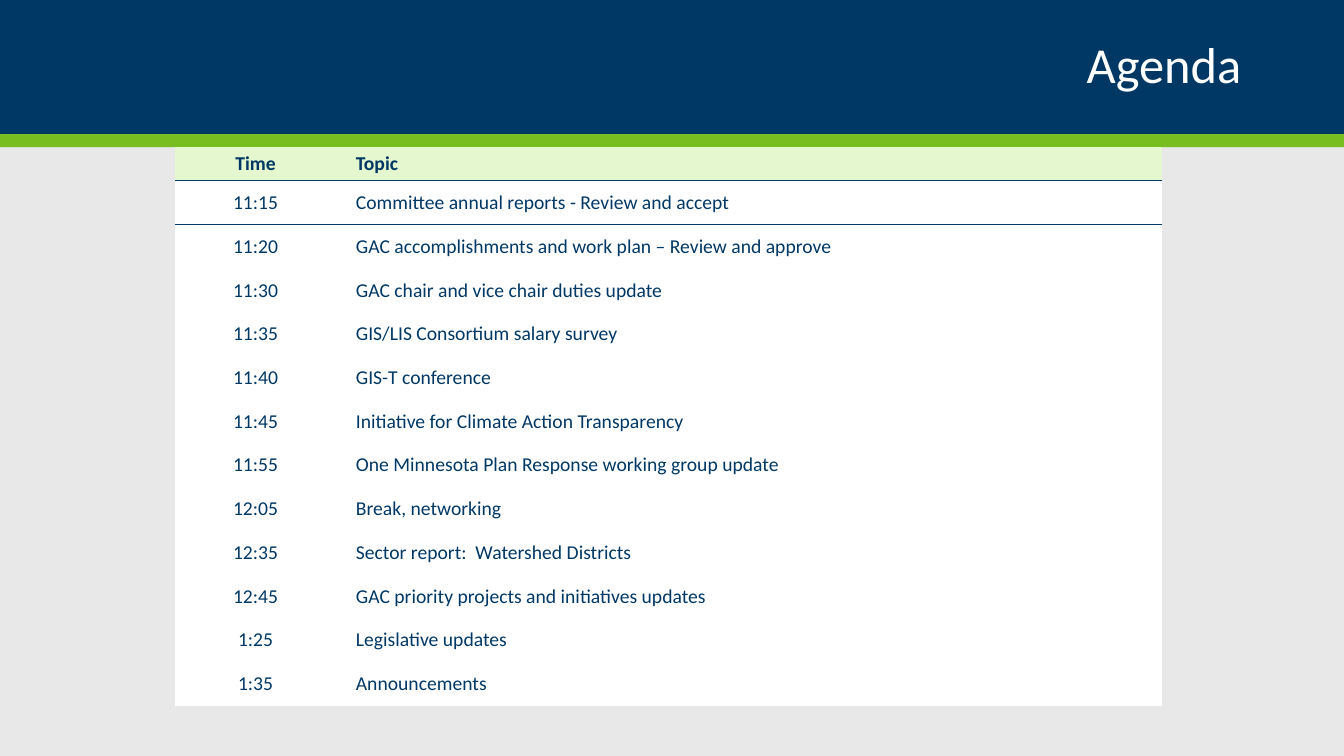
from lxml import etree
from pptx import Presentation
from pptx.dml.color import RGBColor
from pptx.enum import shapes, text
from pptx.oxml import ns
from pptx.util import Inches, Pt

NAVY = RGBColor(0x00, 0x38, 0x65)
GREEN = RGBColor(0x78, 0xBE, 0x21)
PALE = RGBColor(0xE4, 0xF7, 0xCE)
GRAY = RGBColor(0xE8, 0xE8, 0xE8)
WHITE = RGBColor(0xFF, 0xFF, 0xFF)
FONT = "Calibri"
PLAIN = "{2D5ABB26-0587-4C30-8999-92F81FD0307C}"  # table style without grid
LEFT, MID, RIGHT = (text.PP_ALIGN.LEFT, text.PP_ALIGN.CENTER,
                    text.PP_ALIGN.RIGHT)

AGENDA = [
    ("Time", "Topic"),
    ("11:15", "Committee annual reports - Review and accept"),
    ("11:20", "GAC accomplishments and work plan – Review and approve"),
    ("11:30", "GAC chair and vice chair duties update"),
    ("11:35", "GIS/LIS Consortium salary survey"),
    ("11:40", "GIS-T conference"),
    ("11:45", "Initiative for Climate Action Transparency"),
    ("11:55", "One Minnesota Plan Response working group update"),
    ("12:05", "Break, networking"),
    ("12:35", "Sector report:  Watershed Districts"),
    ("12:45", "GAC priority projects and initiatives updates"),
    ("1:25", "Legislative updates"),
    ("1:35", "Announcements"),
]


def format_all(thing, values):
    for name, value in values.items():
        setattr(thing, name, value)


def write(frame, words, align, size, color, bold=False):
    para = frame.paragraphs[0]
    para.alignment = align
    run = para.add_run()
    run.text = words
    format_all(run.font, {"name": FONT, "size": Pt(size), "bold": bold})
    run.font.color.rgb = color
    return para


def add_band(slide, left, top, width, height, color):
    band = slide.shapes.add_shape(
        shapes.MSO_SHAPE.RECTANGLE,
        *map(Inches, (left, top, width, height)))
    band.shadow.inherit = False
    band.fill.solid()
    band.fill.fore_color.rgb = color
    band.line.fill.background()


def add_header(slide, left, top, width, height, title):
    # Navy band with a green strip below
    strip = 0.13
    main = height - strip
    add_band(slide, left, top, width, main, NAVY)
    add_band(slide, left, top + main, width, strip, GREEN)

    # Title
    side = 0.92
    box = slide.shapes.add_textbox(
        Inches(left + side), Inches(top + 0.17),
        Inches(width - 2 * side), Inches(1))
    format_all(box.text_frame, {
        "word_wrap": True, "vertical_anchor": text.MSO_ANCHOR.MIDDLE})
    para = write(box.text_frame, title, RIGHT, 36, WHITE)
    para.line_spacing = 0.9


def add_rule(cell, side):
    line = etree.Element(ns.qn("a:" + side), w=str(Pt(1)))
    fill = etree.SubElement(line, ns.qn("a:solidFill"))
    etree.SubElement(fill, ns.qn("a:srgbClr"), val=str(NAVY))
    cell.fill.solid()
    cell.fill.fore_color.rgb = WHITE
    cell.fill.background()
    cell._tc.get_or_add_tcPr().insert(0, line)


def add_agenda(slide, left, top, width, height, rows):
    frame = slide.shapes.add_table(
        len(rows), 2, *map(Inches, (left, top, width, height)))
    frame.element.xpath(".//a:tableStyleId")[0].text = PLAIN
    table = frame.table
    format_all(table, {"first_row": True, "horz_banding": False})

    # Columns and rows
    first, head = 1.59, 0.33
    table.columns[0].width = Inches(first)
    table.columns[1].width = Inches(width - first)
    for i, row in enumerate(table.rows):
        row.height = Inches((height - head) / (len(rows) - 1) if i else head)

    # Cells
    for i, words in enumerate(rows):
        pad = Inches(0.1 if i else 0.05)
        for j, word in enumerate(words):
            cell = table.cell(i, j)
            format_all(cell, {
                "margin_left": Inches(0.2 if j else 0.1),
                "margin_right": Inches(0.1),
                "margin_top": pad, "margin_bottom": pad,
                "vertical_anchor": text.MSO_ANCHOR.MIDDLE})
            write(cell.text_frame, word, LEFT if j else MID, 14, NAVY, i == 0)
            if i < 2:
                add_rule(cell, "lnT" if i else "lnB")
            cell.fill.solid()
            cell.fill.fore_color.rgb = WHITE if i else PALE


def main():
    deck = Presentation()
    deck.slide_width, deck.slide_height = Inches(13.33), Inches(7.5)
    slide = deck.slides.add_slide(deck.slide_layouts[6])
    slide.background.fill.solid()
    slide.background.fill.fore_color.rgb = GRAY
    add_header(slide, 0, 0, 13.33, 1.46, "Agenda")
    add_agenda(slide, 1.74, 1.46, 9.79, 5.53, AGENDA)
    deck.save("out.pptx")


if __name__ == "__main__":
    main()
